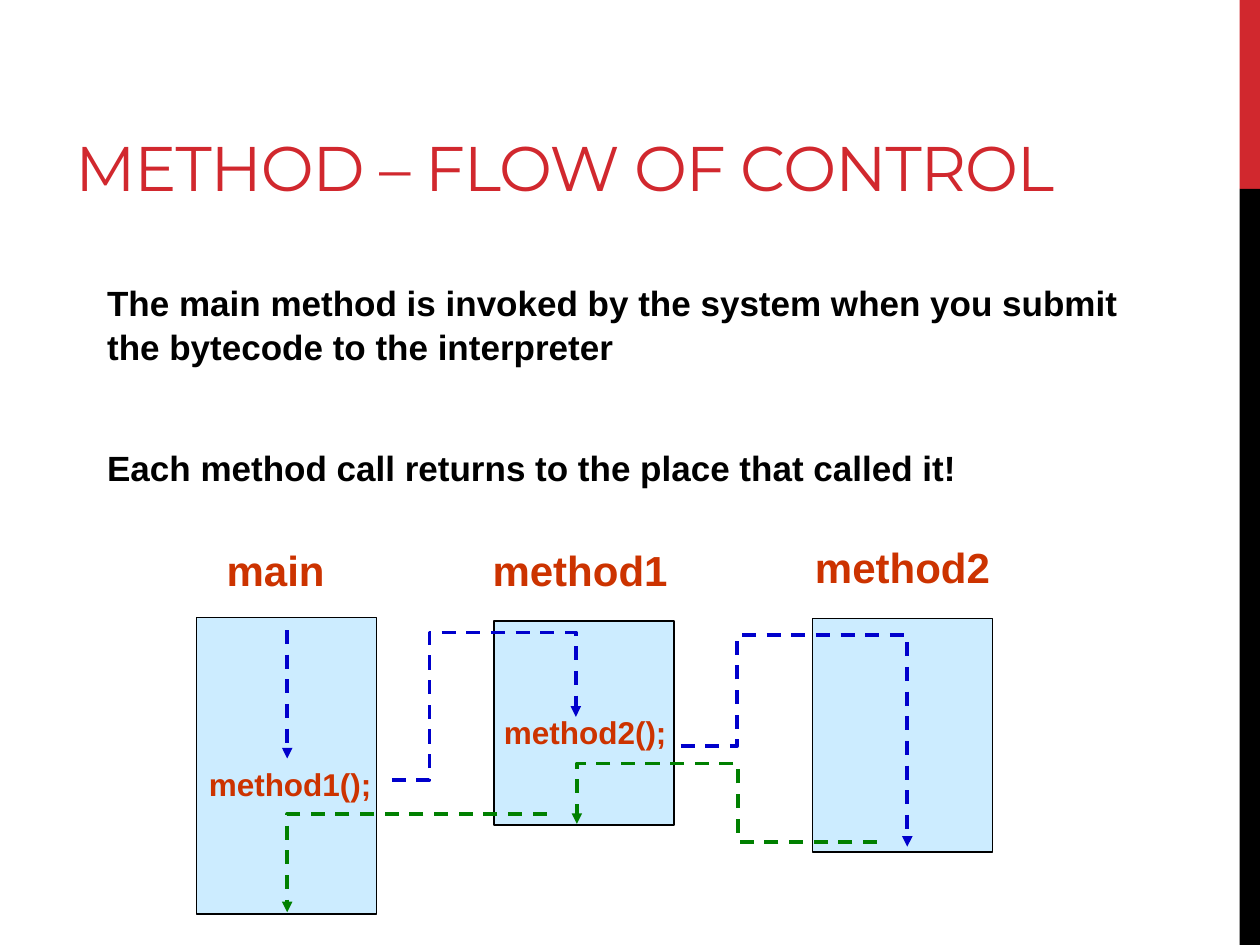
import pptx
import pptx.util
import pptx.dml.color
import pptx.enum.dml
import pptx.enum.shapes
import pptx.enum.text
import pptx.oxml
import pptx.oxml.ns

Cm, Pt = pptx.util.Cm, pptx.util.Pt

THEME = {
    "red": "D1282E", "black": "000000", "box": "CCECFF", "label": "CC3300",
    "call": "0000CC", "return": "008000",
    "title_font": "Montserrat", "font": "Arial",
    "title": 36, "body": 20, "name": 24, "code": 18, "outline": 1, "flow": 2,
}
WIDTH, HEIGHT = 25.4, 19.05
BAND_LEFT, BAND_SPLIT = 24.99, 3.81
BOX_WIDTH = 3.63

TITLE = "METHOD – FLOW OF CONTROL"
BODY = [
    "The main method is invoked by the system when you submit the bytecode to the interpreter",
    "Each method call returns to the place that called it!",
]
BOXES = [(3.96, 12.45, 5.97), (9.96, 12.52, 4.11), (16.38, 12.47, 4.7)]
LABELS = [
    ("main", "name", (4.32, 10.85, 2.49, 1.27)),
    ("method1", "name", (9.68, 10.85, 4.04, 1.27)),
    ("method2", "name", (16.18, 10.8, 4.04, 1.27)),
    ("method1();", "code", (3.96, 15.29, 3.78, 1.02)),
    ("method2();", "code", (9.91, 14.25, 3.78, 1.02)),
]
MAIN_FLOW = (5.79, 12.7, 5.79, 15.29)
# Each route is a start point, then alternating x and y stops.
ROUTES = [
    ("call", (7.9, 15.72), (8.66, 12.75, 11.61, 14.45)),
    ("call", (13.72, 15.04), (14.86, 12.8, 18.29, 17.07)),
    ("return", (17.68, 16.97), (14.88, 15.39, 11.63, 16.61)),
    ("return", (11.02, 16.41), (5.79, 18.39)),
]


def color(name):
    """Return the theme colour of that name."""
    return pptx.dml.color.RGBColor.from_string(THEME[name])


def add_text(s, paragraphs, at, size, fill, font="font", bold=True, wrap=True,
             bottom=False, spacing=None, line=None, before=0, after=0):
    """Add a text box with one format for all its paragraphs."""
    tf = s.shapes.add_textbox(*map(Cm, at)).text_frame
    tf.word_wrap = wrap
    if bottom:
        tf.vertical_anchor = pptx.enum.text.MSO_ANCHOR.BOTTOM
    for i, text in enumerate(paragraphs):
        p = tf.add_paragraph() if i else tf.paragraphs[0]
        p.space_before, p.space_after = Pt(before if i else 0), Pt(after)
        p.line_spacing = line
        r = p.add_run()
        r.text = text
        r.font.name, r.font.size, r.font.bold = THEME[font], Pt(THEME[size]), bold
        r.font.color.rgb = color(fill)
        if spacing:
            r._r.get_or_add_rPr().set("spc", str(spacing))


def add_rect(s, at, fill, outline=False):
    """Add a filled rectangle, outlined on request."""
    sp = s.shapes.add_shape(pptx.enum.shapes.MSO_SHAPE.RECTANGLE, *map(Cm, at))
    sp.shadow.inherit = False
    sp.fill.solid()
    sp.fill.fore_color.rgb = color(fill)
    if outline:
        sp.line.color.rgb = color("black")
        sp.line.width = Pt(THEME["outline"])
    else:
        sp.line.fill.background()


def style_flow(sp, fill):
    """Make a line dashed, with an arrowhead at its end."""
    sp.line.color.rgb = color(fill)
    sp.line.width = Pt(THEME["flow"])
    sp.line.dash_style = pptx.enum.dml.MSO_LINE.DASH
    ns = pptx.oxml.ns.nsdecls("a")
    sp.line._get_or_add_ln().append(
        pptx.oxml.parse_xml(f'<a:tailEnd {ns} type="triangle"/>'))
    sp._element.spPr.append(pptx.oxml.parse_xml(f"<a:effectLst {ns}/>"))


def add_route(s, fill, start, stops):
    """Add a right-angled route that turns at each stop."""
    x, y = start
    points = []
    for i, stop in enumerate(stops):
        x, y = (x, stop) if i % 2 else (stop, y)
        points.append((Cm(x), Cm(y)))
    builder = s.shapes.build_freeform(*map(Cm, start))
    builder.add_line_segments(points, close=False)
    sp = builder.convert_to_shape()
    sp.fill.background()
    style_flow(sp, fill)


def main():
    """Build the slide and save it."""
    prs = pptx.Presentation()
    prs.slide_width, prs.slide_height = Cm(WIDTH), Cm(HEIGHT)
    s = prs.slides.add_slide(prs.slide_layouts[6])

    band = WIDTH - BAND_LEFT
    add_rect(s, (BAND_LEFT, 0, band, BAND_SPLIT), "red")
    add_rect(s, (BAND_LEFT, BAND_SPLIT, band, HEIGHT - BAND_SPLIT), "black")
    add_text(s, [TITLE], (1.27, 0.43, 23.04, 3.81), "title", "red",
             font="title_font", bold=False, bottom=True, spacing=-60)
    add_text(s, BODY, (1.91, 5.51, 21.79, 4.65), "body", "black",
             line=1.05, before=38, after=6)

    for left, top, height in BOXES:
        add_rect(s, (left, top, BOX_WIDTH, height), "box", outline=True)
    for text, size, at in LABELS:
        add_text(s, [text], at, size, "label", wrap=False)

    sp = s.shapes.add_connector(
        pptx.enum.shapes.MSO_CONNECTOR.STRAIGHT, *map(Cm, MAIN_FLOW))
    style_flow(sp, "call")
    for fill, start, stops in ROUTES:
        add_route(s, fill, start, stops)

    prs.save("out.pptx")


if __name__ == "__main__":
    main()
